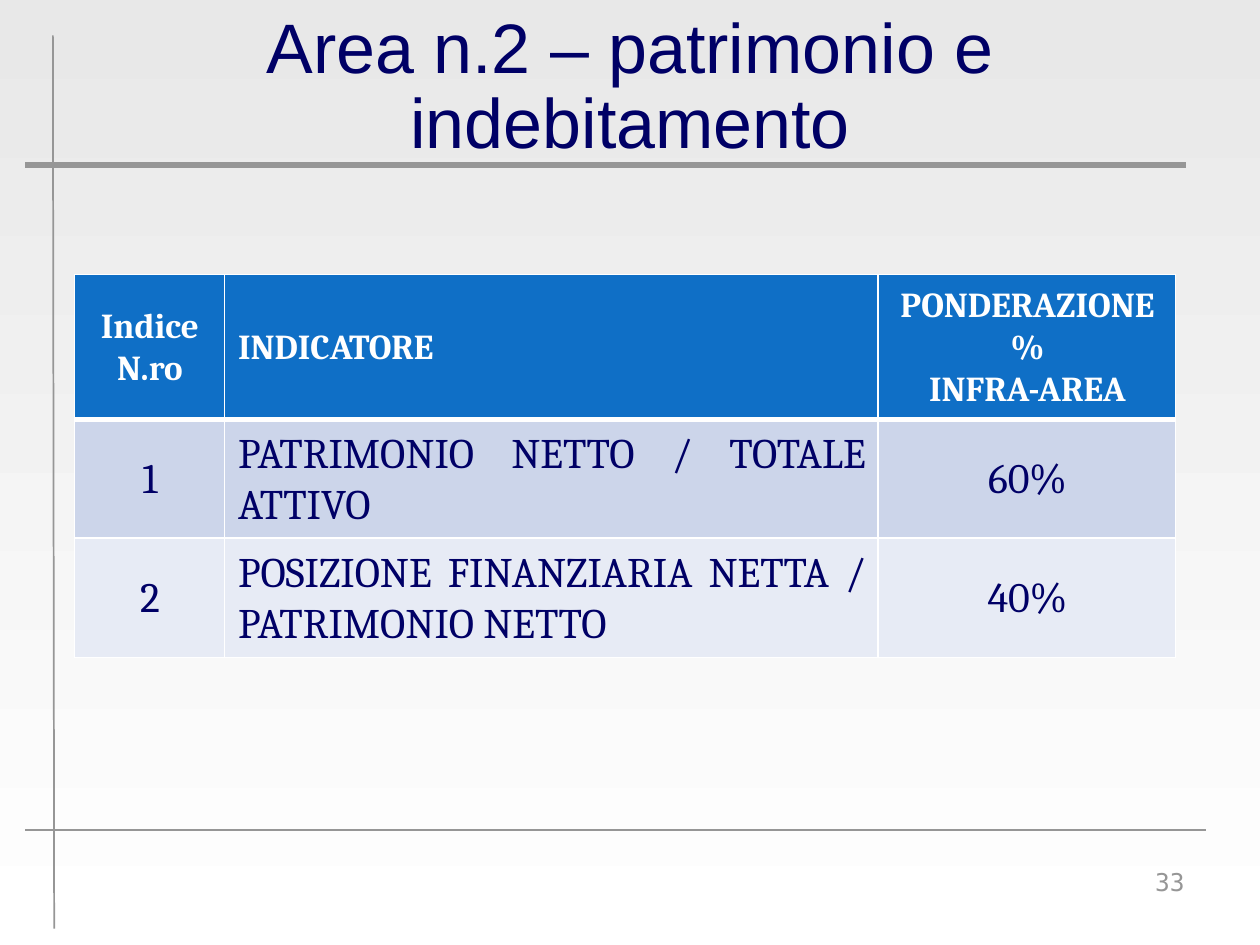
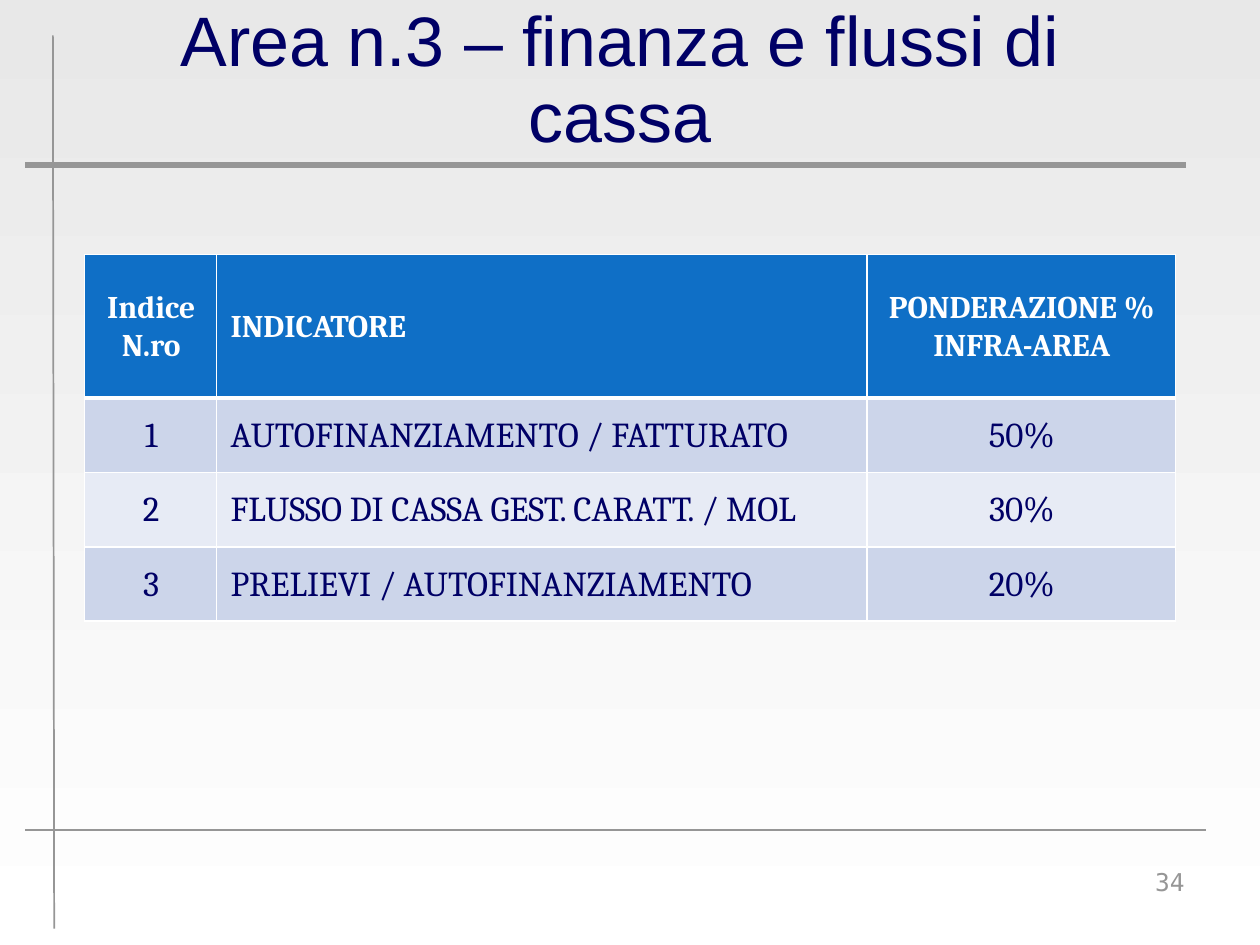
import pptx
import pptx.util
import pptx.dml.color
import pptx.enum.shapes
import pptx.enum.text
import pptx.oxml.ns
from lxml import etree

Inches = pptx.util.Inches
Pt = pptx.util.Pt
RGBColor = pptx.dml.color.RGBColor
ALIGN = pptx.enum.text.PP_ALIGN
MIDDLE = pptx.enum.text.MSO_ANCHOR.MIDDLE
qn = pptx.oxml.ns.qn

NAVY = RGBColor(0x00, 0x00, 0x66)
GREY = RGBColor(0x96, 0x96, 0x96)
WHITE = RGBColor(0xFF, 0xFF, 0xFF)
HEADER_BLUE = RGBColor(0x0F, 0x6F, 0xC6)
BAND_DARK = RGBColor(0xCC, 0xD5, 0xEA)
BAND_LIGHT = RGBColor(0xE7, 0xEB, 0xF5)
BACK_TOP = RGBColor(0xE8, 0xE8, 0xE8)

TITLE_FONT = {"name": "Arial", "size": Pt(40), "color": NAVY}
NUMBER_FONT = {"name": "DejaVu Sans Mono", "size": Pt(14), "color": GREY}
COLUMN_ALIGN = [ALIGN.CENTER, ALIGN.JUSTIFY, ALIGN.CENTER]
HEADER = ["Indice N.ro", "INDICATORE", "PONDERAZIONE %\nINFRA-AREA"]

# x1, y1, x2, y2, width in points
RULES = [
    (0.2, 1.31, 9.41, 1.31, 3),
    (0.2, 6.59, 9.57, 6.59, 1),
    (0.43, 7.37, 0.42, 0.28, 1),
]

SLIDES = [
    {
        "title": "Area n.2 – patrimonio e indebitamento",
        "title_at": (0.75, 0.17),
        "number": "33",
        "table_at": (0.59, 2.18),
        "cols": [1.19, 5.19, 2.36],
        "heights": [0.95, 0.82, 0.95],
        "sizes": (20, 24),
        "rows": [
            ["1", "PATRIMONIO NETTO / TOTALE ATTIVO", "60%"],
            ["2", "POSIZIONE FINANZIARIA NETTA / PATRIMONIO NETTO", "40%"],
        ],
    },
    {
        "title": "Area n.3 – finanza e flussi di cassa",
        "title_at": (0.67, 0.12),
        "number": "34",
        "table_at": (0.67, 2.02),
        "cols": [1.05, 5.16, 2.45],
        "heights": [1.14, 0.59, 0.59, 0.59],
        "sizes": (18, 20),
        "rows": [
            ["1", "AUTOFINANZIAMENTO / FATTURATO", "50%"],
            ["2", "FLUSSO DI CASSA GEST. CARATT. / MOL", "30%"],
            ["3", "PRELIEVI / AUTOFINANZIAMENTO", "20%"],
        ],
    },
]


def set_font(font, formats):
    for name, value in formats.items():
        if name == "color":
            font.color.rgb = value
        else:
            setattr(font, name, value)


def add_background(s):
    fill = s.background.fill
    fill.gradient()
    fill.gradient_angle = 270
    for stop, color in zip(fill.gradient_stops, (BACK_TOP, WHITE)):
        stop.color.rgb = color


def add_rule(s, x1, y1, x2, y2, width):
    line = s.shapes.add_connector(
        pptx.enum.shapes.MSO_CONNECTOR.STRAIGHT,
        Inches(x1), Inches(y1), Inches(x2), Inches(y2))
    line.line.color.rgb = GREY
    line.line.width = Pt(width)
    etree.SubElement(line._element.spPr, qn("a:effectLst"))


def add_text(s, text, at, formats, align, anchor=None, spacing=None):
    tf = s.shapes.add_textbox(*map(Inches, at)).text_frame
    tf.word_wrap = True
    tf.vertical_anchor = anchor
    p = tf.paragraphs[0]
    p.alignment = align
    p.line_spacing = spacing
    r = p.add_run()
    r.text = text
    set_font(r.font, formats)


def set_borders(cell, top, bottom):
    """Draw white cell borders; the side borders are always 1 pt."""
    tc_pr = cell._tc.get_or_add_tcPr()
    for side, width in zip("LRTB", (1, 1, top, bottom)):
        ln = etree.SubElement(tc_pr, qn("a:ln" + side), w=str(Pt(width)))
        fill = etree.SubElement(ln, qn("a:solidFill"))
        etree.SubElement(fill, qn("a:srgbClr"), val=str(WHITE))


def fill_cell(cell, text, align, fill, formats):
    cell.fill.solid()
    cell.fill.fore_color.rgb = fill
    cell.vertical_anchor = MIDDLE
    tf = cell.text_frame
    tf.text = text
    for p in tf.paragraphs:
        p.alignment = align
        p.line_spacing = 1.05
        p._p.get_or_add_pPr().set("marL", str(Inches(0.01)))
        for r in p.runs:
            set_font(r.font, formats)


def add_indicator_table(s, at, cols, heights, sizes, rows):
    size = (sum(cols), sum(heights))
    table = s.shapes.add_table(
        len(heights), len(cols), *map(Inches, at + size)).table
    for column, width in zip(table.columns, cols):
        column.width = Inches(width)
    for row, height in zip(table.rows, heights):
        row.height = Inches(height)

    header_size, body_size = map(Pt, sizes)
    header_font = {"name": "Cambria", "size": header_size, "bold": True, "color": WHITE}
    body_font = {"name": "Cambria", "size": body_size, "bold": False, "color": NAVY}
    for i, texts in enumerate([HEADER] + rows):
        if i == 0:
            fill, formats = HEADER_BLUE, header_font
        else:
            fill, formats = (BAND_DARK if i % 2 else BAND_LIGHT), body_font
        for j, text in enumerate(texts):
            cell = table.cell(i, j)
            set_borders(cell, top=3 if i == 1 else 1, bottom=3 if i == 0 else 1)
            fill_cell(cell, text, COLUMN_ALIGN[j], fill, formats)


def add_area_slide(prs, area):
    s = prs.slides.add_slide(prs.slide_layouts[6])
    add_background(s)
    for rule in RULES:
        add_rule(s, *rule)
    add_text(s, area["title"], area["title_at"] + (8.5, 1.06), TITLE_FONT,
             ALIGN.CENTER, MIDDLE, 0.9)
    add_indicator_table(s, area["table_at"], area["cols"], area["heights"],
                        area["sizes"], area["rows"])
    add_text(s, area["number"], (7.17, 6.83, 2.33, 0.52), NUMBER_FONT, ALIGN.RIGHT)


def main():
    prs = pptx.Presentation()
    prs.slide_width = Inches(10)
    prs.slide_height = Inches(7.5)
    for area in SLIDES:
        add_area_slide(prs, area)
    prs.save("out.pptx")


if __name__ == "__main__":
    main()
